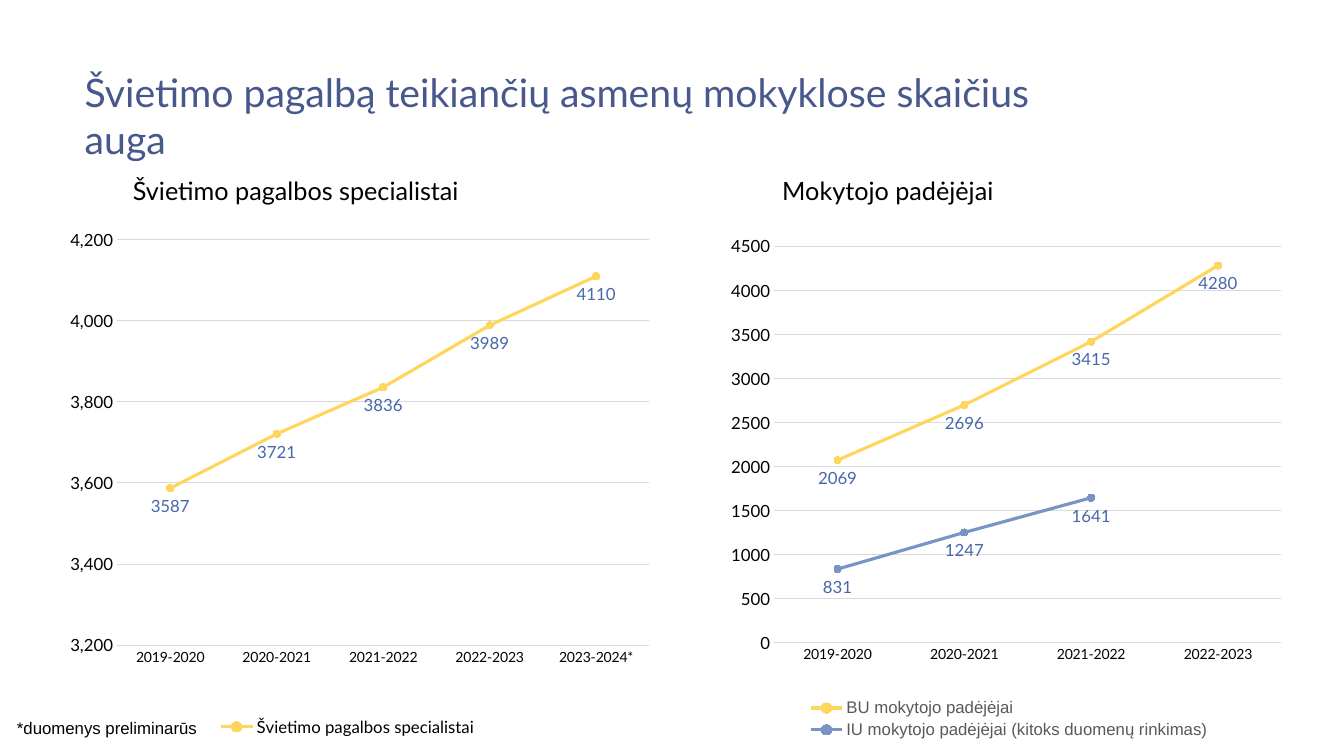
from lxml import etree
from pptx import Presentation
from pptx import util as u
from pptx.chart.data import CategoryChartData
from pptx.dml.color import RGBColor
from pptx.enum import chart as c, text as t
from pptx.oxml import ns

WIDTH, HEIGHT = 13.33, 7.5
YELLOW, BLUE, LABEL, GRID = "FFD65C", "7893C6", "4667A8", "D9D9D9"
YEARS = ["2019-2020", "2020-2021", "2021-2022", "2022-2023", "2023-2024*"]


def set_font(font, size, color, name="Lato"):
    for key, value in {"size": u.Pt(size), "name": name, "bold": False}.items():
        setattr(font, key, value)
    font.color.rgb = RGBColor.from_string(color)


def add_layout(parent, position, **values):
    """Give a plot area or legend a fixed place, in shares of the chart."""
    for old in parent.findall(ns.qn("c:layout")):
        parent.remove(old)
    layout = etree.Element(ns.qn("c:layout"))
    manual = etree.SubElement(layout, ns.qn("c:manualLayout"))
    for tag, value in values.items():
        etree.SubElement(manual, ns.qn("c:" + tag)).set("val", str(value))
    parent.insert(position, layout)


presentation = Presentation()
presentation.slide_width, presentation.slide_height = u.Inches(WIDTH), u.Inches(HEIGHT)
slide = presentation.slides.add_slide(presentation.slide_layouts[5])

# Title, subtitles and footnote
title = slide.shapes.title
title.left, title.top, title.width, title.height = map(u.Inches, (0.74, 0.63, 10.32, 0.66))
texts = [(title, "Švietimo pagalbą teikiančių asmenų mokyklose skaičius auga", 28, "48578C", "Lato")]
for box, words, size, font in [
    ((1.22, 1.69, 4.45, 0.4), "Švietimo pagalbos specialistai", 18, "Lato"),
    ((7.66, 1.69, 4.69, 0.4), "Mokytojo padėjėjai", 18, "Lato"),
    ((0.07, 7.07, 3.06, 0.3), "*duomenys preliminarūs", 12, "Arial"),
]:
    texts.append((slide.shapes.add_textbox(*map(u.Inches, box)), words, size, "000000", font))

for shape, words, size, color, font in texts:
    frame = shape.text_frame
    frame.text = words
    for key, value in {"word_wrap": True, "auto_size": t.MSO_AUTO_SIZE.NONE,
                       "vertical_anchor": t.MSO_ANCHOR.TOP}.items():
        setattr(frame, key, value)
    paragraph = frame.paragraphs[0]
    paragraph.alignment = t.PP_ALIGN.LEFT
    set_font(paragraph.runs[0].font, size, color, font)

# Line charts
charts = [
    {"box": (0.65, 2.28, 5.94, 5.21), "years": YEARS, "plot": (0.086, 0.019),
     "axis": (3200, 4200, 200), "format": "#,##0", "legend": ("000000", "Lato"),
     "series": [("Švietimo pagalbos specialistai", [3587, 3721, 3836, 3989, 4110], YELLOW)]},
    {"box": (7.18, 2.28, 5.66, 5.09), "years": YEARS[:4], "plot": (0.088, 0.032),
     "axis": (0, 4500, 500), "format": "General", "legend": ("595959", "Arial"),
     "series": [("BU mokytojo padėjėjai", [2069, 2696, 3415, 4280], YELLOW),
                ("IU mokytojo padėjėjai (kitoks duomenų rinkimas)", [831, 1247, 1641, None], BLUE)]},
]
for item in charts:
    data = CategoryChartData()
    data.categories = item["years"]
    for name, values, color in item["series"]:
        data.add_series(name, values)
    chart = slide.shapes.add_chart(
        c.XL_CHART_TYPE.LINE_MARKERS, *map(u.Inches, item["box"]), data).chart
    chart.has_title = False
    set_font(chart.font, 10, "000000", "Arial")

    # Axes and gridlines
    categories, scale = chart.category_axis, chart.value_axis
    for axis, size in ((categories, 10), (scale, 12)):
        axis.major_tick_mark = axis.minor_tick_mark = c.XL_TICK_MARK.NONE
        set_font(axis.tick_labels.font, size, "000000")
    scale.minimum_scale, scale.maximum_scale, scale.major_unit = item["axis"]
    scale.tick_labels.number_format = item["format"]
    scale.tick_labels.number_format_is_linked = False
    scale.format.line.fill.background()
    for line in (categories.format.line, scale.major_gridlines.format.line):
        line.width = u.Pt(0.75)
        line.color.rgb = RGBColor.from_string(GRID)

    # Lines, markers and value labels
    plot = chart.plots[0]
    plot.vary_by_categories = False
    for series, (name, values, color) in zip(plot.series, item["series"]):
        rgb = RGBColor.from_string(color)
        series.smooth = False
        series.format.line.width = u.Pt(2.25)
        series.format.line.color.rgb = rgb
        marker = series.marker
        marker.style, marker.size = c.XL_MARKER_STYLE.CIRCLE, 5
        marker.format.fill.solid()
        marker.format.fill.fore_color.rgb = rgb
        marker.format.line.color.rgb = rgb
        labels = series.data_labels
        for key, value in {"show_value": True, "position": c.XL_LABEL_POSITION.BELOW,
                           "number_format": "0", "number_format_is_linked": False}.items():
            setattr(labels, key, value)
        set_font(labels.font, 12, LABEL)

    # Legend and plot area
    chart.has_legend = True
    chart.legend.position = c.XL_LEGEND_POSITION.BOTTOM
    chart.legend.include_in_layout = False
    set_font(chart.legend.font, 12, *item["legend"])
    x, y = item["plot"]
    area = chart.element.find(".//" + ns.qn("c:plotArea"))
    add_layout(area, 0, layoutTarget="inner", xMode="edge", yMode="edge",
               x=x, y=y, w=0.889, h=0.772)
    if len(item["series"]) == 1:
        add_layout(chart.legend._element, 1, xMode="edge", yMode="edge", x=0.25, y=0.92)

presentation.save("out.pptx")
